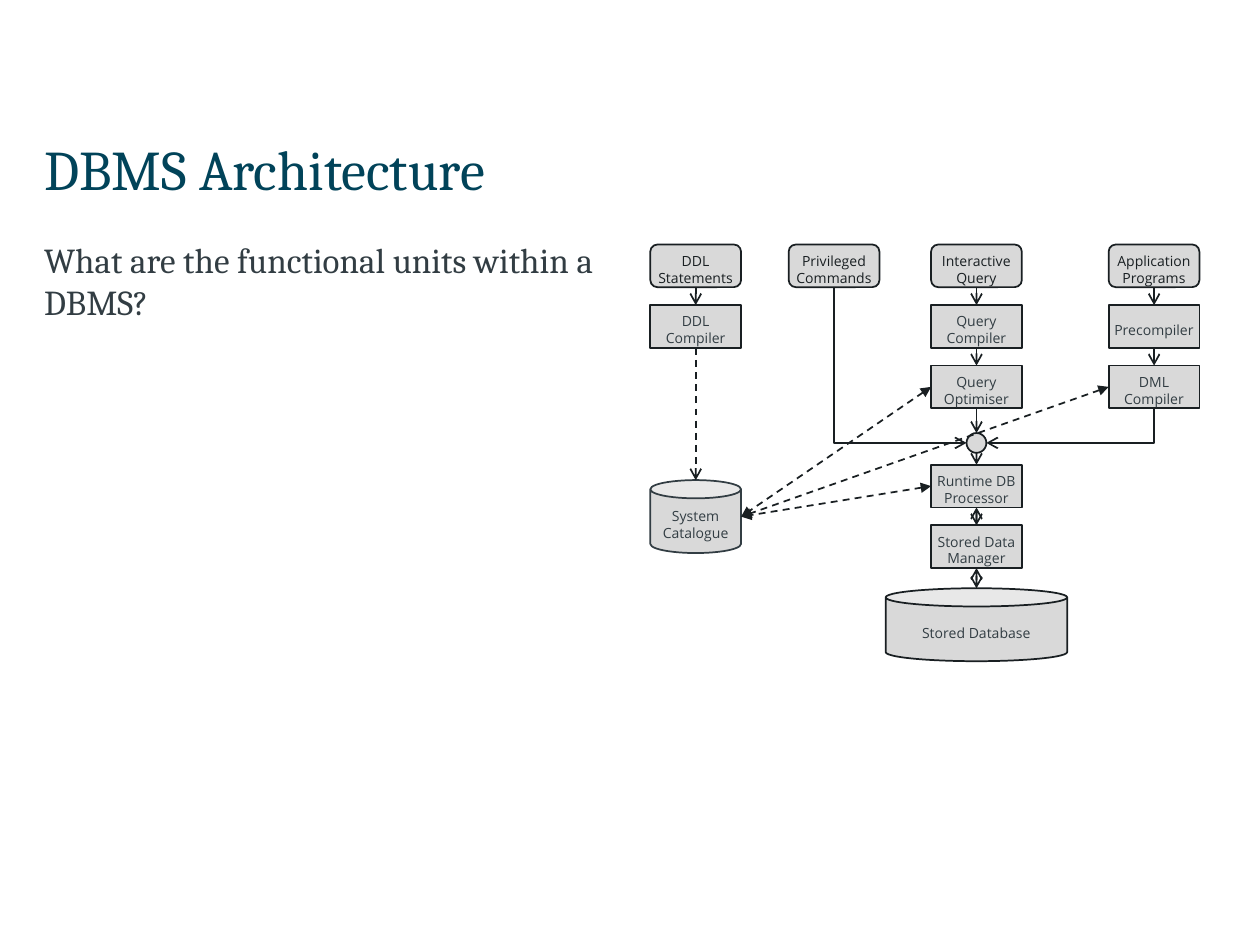
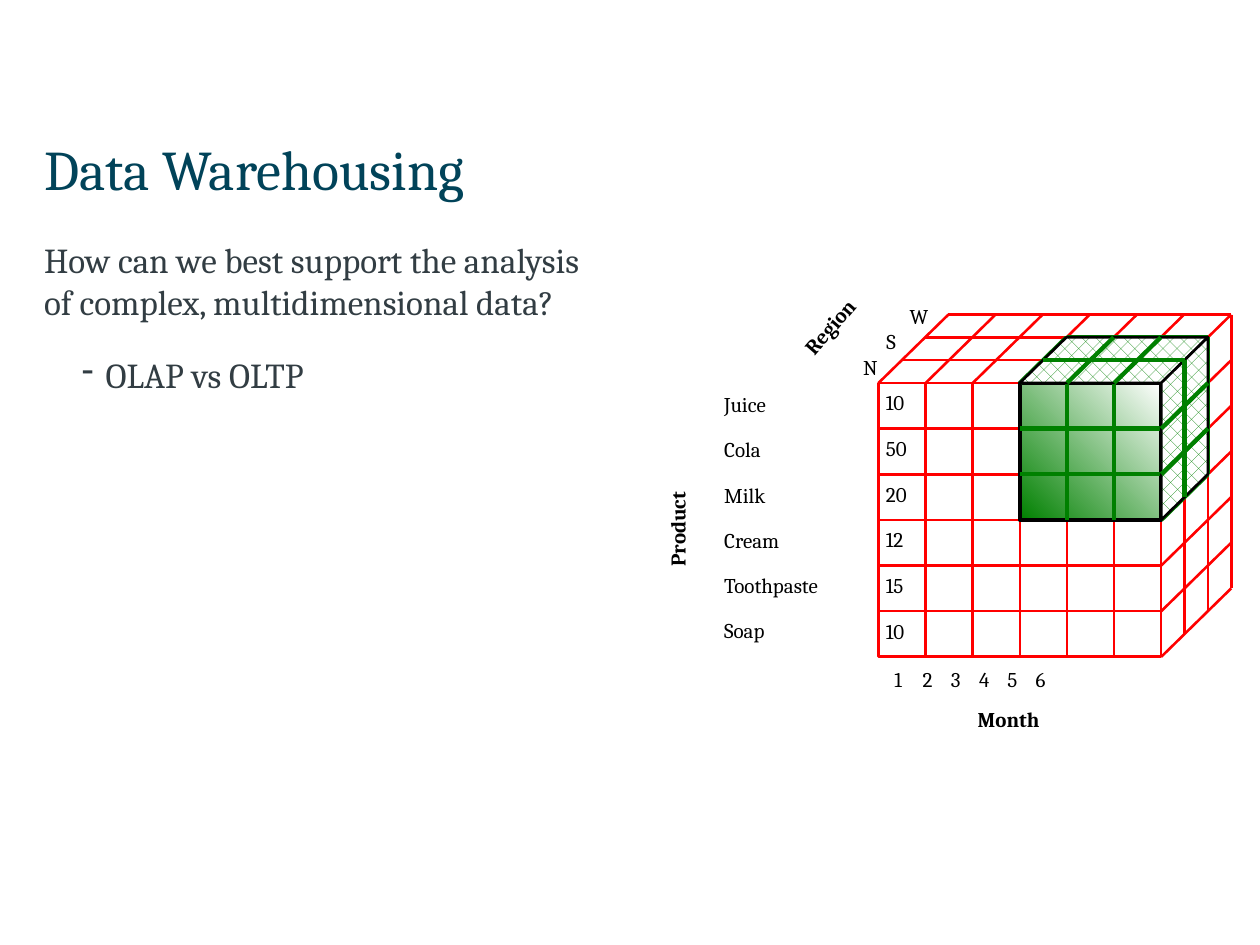
from lxml.etree import SubElement
from pptx import Presentation
from pptx.dml.color import RGBColor
from pptx.enum.dml import MSO_LINE, MSO_PATTERN
from pptx.enum.shapes import MSO_CONNECTOR as Connector, MSO_SHAPE as Shape
from pptx.enum.text import MSO_ANCHOR as Anchor, PP_ALIGN as Align
from pptx.oxml.ns import qn
from pptx.util import Cm, Pt

SERIF = "Cambria"
SANS = "Open Sans"
TITLE = "014359"
SLATE = "323D43"
INK = "191F22"
GREY = "D9D9D9"
RED = "FF0000"
GREEN = "008000"
BLACK = "000000"
WHITE = "FFFFFF"

COLUMN_DDL, COLUMN_COMMANDS, COLUMN_QUERY, COLUMN_PROGRAMS = 13.11, 15.9, 18.77, 22.35
UNIT_WIDTH, UNIT_HEIGHT, ROW_PITCH = 1.83, 0.86, 1.22
FIRST_ROW, RUNTIME_ROW = 4.93, 9.37
CAN_HEIGHT, JUNCTION = 1.47, 0.4

CUBE_LEFT, CUBE_TOP = 17.71, 7.72
MONTH_STEP, PRODUCT_STEP = 0.95, 0.92
REGION_SHIFT, REGION_RISE = 0.47, 0.46
MONTHS, PRODUCTS, REGIONS = 6, 6, 3


def colour(code):
    return RGBColor.from_string(code)


def style_font(paragraph, size, name, code, bold=False):
    font = paragraph.font
    font.size = Pt(size)
    font.name = name
    font.bold = bold
    font.color.rgb = colour(code)


def set_insets(frame, left, top, right, bottom):
    frame.margin_left, frame.margin_top = Cm(left), Cm(top)
    frame.margin_right, frame.margin_bottom = Cm(right), Cm(bottom)


def style_line(line, code, width):
    line.color.rgb = colour(code)
    line.width = Pt(width)


def add_titled_page(deck, title):
    page = deck.slides.add_slide(deck.slide_layouts[5])
    box = page.shapes.title
    box.left, box.top, box.width, box.height = Cm(0.89), Cm(2.49), Cm(23.6), Cm(1.8)
    frame = box.text_frame
    frame.text = title
    frame.vertical_anchor = Anchor.MIDDLE
    set_insets(frame, 0, 0.13, 0.25, 0.13)
    para = frame.paragraphs[0]
    para.alignment = Align.LEFT
    style_font(para, 32, SERIF, TITLE)
    return page


def add_body(page, question, *points):
    frame = page.shapes.add_textbox(Cm(0.89), Cm(4.67), Cm(11.38), Cm(12.47)).text_frame
    frame.word_wrap = True
    set_insets(frame, 0, 0.13, 0.25, 0.13)
    para = frame.paragraphs[0]
    para.text = question
    para.space_after = Pt(18)
    style_font(para, 20, SERIF, SLATE)
    for point in points:
        para = frame.add_paragraph()
        para.text = point
        para.space_after = Pt(12)
        properties = para._p.get_or_add_pPr()
        properties.set("marL", str(Cm(1.24)))
        properties.set("indent", str(Cm(-0.48)))
        SubElement(properties, qn("a:buChar")).set("char", "-")
        style_font(para, 20, SERIF, SLATE)


def add_unit(page, kind, left, top, width, height, text="", text_colour=SLATE, line_colour=INK):
    unit = page.shapes.add_shape(kind, Cm(left), Cm(top), Cm(width), Cm(height))
    unit.shadow.inherit = False
    unit.fill.solid()
    unit.fill.fore_color.rgb = colour(GREY)
    style_line(unit.line, line_colour, 1)
    if text:
        frame = unit.text_frame
        frame.text = text
        frame.word_wrap = False
        frame.vertical_anchor = Anchor.MIDDLE
        set_insets(frame, 0.25, 0.13, 0.25, 0)
        for para in frame.paragraphs:
            para.alignment = Align.CENTER
            style_font(para, 8, SANS, text_colour)
    return unit


def add_input(page, left, text):
    return add_unit(page, Shape.ROUNDED_RECTANGLE, left, FIRST_ROW,
                    UNIT_WIDTH, UNIT_HEIGHT, text, INK)


def add_step(page, left, top, text):
    return add_unit(page, Shape.RECTANGLE, left, top, UNIT_WIDTH, UNIT_HEIGHT, text)


def side(shape, across, down):
    return shape.left + int(shape.width * across), shape.top + int(shape.height * down)


def top_of(shape):
    return side(shape, 0.5, 0)


def bottom_of(shape):
    return side(shape, 0.5, 1)


def left_of(shape):
    return side(shape, 0, 0.5)


def right_of(shape):
    return side(shape, 1, 0.5)


def add_line(page, start, end, code=INK, width=1, head=None, tail=None, dashed=False, bent=False):
    kind = Connector.ELBOW if bent else Connector.STRAIGHT
    link = page.shapes.add_connector(kind, *start, *end)
    style_line(link.line, code, width)
    if dashed:
        link.line.dash_style = MSO_LINE.DASH
    properties = link._element.spPr
    if bent:
        properties.find(qn("a:prstGeom")).set("prst", "bentConnector2")
    for tag, arrow in (("a:headEnd", head), ("a:tailEnd", tail)):
        if arrow:
            SubElement(properties.find(qn("a:ln")), qn(tag)).set("type", arrow)
    SubElement(properties, qn("a:effectLst"))


def add_label(page, left, top, width, text, bold=False, height=0.6, rotation=0, tab=None):
    box = page.shapes.add_textbox(Cm(left), Cm(top), Cm(width), Cm(height))
    box.rotation = rotation
    frame = box.text_frame
    frame.word_wrap = True
    set_insets(frame, 0, 0, 0, 0)
    para = frame.paragraphs[0]
    para.text = text
    if tab:
        stops = SubElement(para._p.get_or_add_pPr(), qn("a:tabLst"))
        for number in range(1, text.count("\t") + 1):
            stop = SubElement(stops, qn("a:tab"))
            stop.set("pos", str(Cm(tab * number)))
            stop.set("algn", "l")
    style_font(para, 12, SERIF, BLACK, bold)


def cube_point(month, product, region):
    return (Cm(CUBE_LEFT + month * MONTH_STEP + region * REGION_SHIFT),
            Cm(CUBE_TOP + product * PRODUCT_STEP - region * REGION_RISE))


def add_cube_lines(page, code, width, *pairs):
    for start, end in pairs:
        add_line(page, cube_point(*start), cube_point(*end), code, width)


def add_front(page, first_month, products, code, width):
    left, top = cube_point(first_month, 0, 0)
    right, bottom = cube_point(MONTHS, products, 0)
    front = page.shapes.add_shape(Shape.RECTANGLE, left, top, right - left, bottom - top)
    front.shadow.inherit = False
    front.fill.background()
    style_line(front.line, code, width)
    return front


def add_grid(page, first_month, products, code, width):
    add_cube_lines(page, code, width,
                   *[((first_month, row, 0), (MONTHS, row, 0)) for row in range(1, products)],
                   *[((month, 0, 0), (month, products, 0))
                     for month in range(first_month + 1, MONTHS)])


def add_depth(page, first_month, months, products, depth, levels, code, width):
    add_cube_lines(page, code, width,
                   *[((month, 0, 0), (month, 0, depth)) for month in months],
                   *[((MONTHS, row, 0), (MONTHS, row, depth)) for row in products],
                   *[((first_month, 0, level), (MONTHS, 0, level)) for level in levels],
                   *[((MONTHS, 0, level), (MONTHS, max(products) + (depth == 2), level))
                     for level in levels])


def add_face(page, *corners):
    first, *others = [cube_point(*corner) for corner in corners]
    builder = page.shapes.build_freeform(*first, scale=1.0)
    builder.add_line_segments(others, close=True)
    face = builder.convert_to_shape()
    face.shadow.inherit = False
    face.fill.patterned()
    face.fill.pattern = MSO_PATTERN.PERCENT_25
    face.fill.fore_color.rgb = colour(GREEN)
    face.fill.back_color.rgb = colour(WHITE)
    style_line(face.line, BLACK, 1.48)


def add_selection(page):
    first, last, rows, depth = 3, MONTHS, 3, 2
    front = add_front(page, first, rows, BLACK, 2.48)
    front.fill.gradient()
    front.fill.gradient_angle = 45
    for stop, position, code in zip(front.fill.gradient_stops, (0, 1), (GREEN, WHITE)):
        stop.position = position
        stop.color.rgb = colour(code)
    add_grid(page, first, rows, GREEN, 2.48)
    add_cube_lines(page, GREEN, 2.48,
                   ((first, 0, 0), (first, 0, depth)), ((first, 0, depth), (last, 0, depth)),
                   ((last, 0, depth), (last, rows, depth)), ((last, rows, 0), (last, rows, depth)),
                   ((last, 0, 0), (last, 0, depth)))
    add_face(page, (first, 0, 0), (first, 0, depth), (last, 0, depth), (last, 0, 0))
    add_face(page, (last, 0, 0), (last, 0, depth), (last, rows, depth), (last, rows, 0))
    add_depth(page, first, range(first + 1, last), range(1, rows), depth, [1], GREEN, 2.48)


def build_architecture(deck):
    page = add_titled_page(deck, "DBMS Architecture")
    add_body(page, "What are the functional units within a DBMS?")
    second_row, third_row = FIRST_ROW + ROW_PITCH, FIRST_ROW + 2 * ROW_PITCH

    statements = add_input(page, COLUMN_DDL, "DDL\nStatements")
    commands = add_input(page, COLUMN_COMMANDS, "Privileged\nCommands")
    query = add_input(page, COLUMN_QUERY, "Interactive\nQuery")
    programs = add_input(page, COLUMN_PROGRAMS, "Application\nPrograms")
    ddl_compiler = add_step(page, COLUMN_DDL, second_row, "DDL\nCompiler")
    query_compiler = add_step(page, COLUMN_QUERY, second_row, "Query\nCompiler")
    precompiler = add_step(page, COLUMN_PROGRAMS, second_row, "Precompiler")
    optimiser = add_step(page, COLUMN_QUERY, third_row, "Query\nOptimiser")
    dml_compiler = add_step(page, COLUMN_PROGRAMS, third_row, "DML\nCompiler")
    runtime = add_step(page, COLUMN_QUERY, RUNTIME_ROW, "Runtime DB\nProcessor")
    manager = add_step(page, COLUMN_QUERY, RUNTIME_ROW + ROW_PITCH, "Stored Data\nManager")
    catalogue = add_unit(page, Shape.CAN, COLUMN_DDL, 9.68, UNIT_WIDTH, CAN_HEIGHT,
                         "System\nCatalogue", line_colour=SLATE)
    database = add_unit(page, Shape.CAN, COLUMN_QUERY - UNIT_WIDTH / 2, 11.86,
                        2 * UNIT_WIDTH, CAN_HEIGHT, "Stored Database")
    junction = add_unit(page, Shape.OVAL, COLUMN_QUERY + (UNIT_WIDTH - JUNCTION) / 2, 8.73,
                        JUNCTION, JUNCTION)

    for upper, lower in ((statements, ddl_compiler), (query, query_compiler),
                         (query_compiler, optimiser), (programs, precompiler),
                         (precompiler, dml_compiler), (optimiser, junction),
                         (junction, runtime)):
        add_line(page, bottom_of(upper), top_of(lower), tail="arrow")
    for upper, lower in ((runtime, manager), (manager, database)):
        add_line(page, bottom_of(upper), top_of(lower), head="arrow", tail="arrow")
    add_line(page, bottom_of(ddl_compiler), top_of(catalogue), tail="arrow", dashed=True)
    add_line(page, left_of(junction), bottom_of(commands), head="arrow", bent=True)
    add_line(page, right_of(junction), bottom_of(dml_compiler), head="arrow", bent=True)
    for reader in (optimiser, dml_compiler, runtime):
        add_line(page, left_of(reader), right_of(catalogue),
                 head="triangle", tail="triangle", dashed=True)


def build_warehousing(deck):
    page = add_titled_page(deck, "Data Warehousing")
    add_body(page, "How can we best support the analysis of complex, multidimensional data?",
             "OLAP vs OLTP")
    add_front(page, 0, PRODUCTS, RED, 1.48)
    add_grid(page, 0, PRODUCTS, RED, 1.48)
    add_depth(page, 0, range(MONTHS + 1), range(1, PRODUCTS + 1), REGIONS,
              range(1, REGIONS + 1), RED, 1.48)

    sales = (("Juice", "10"), ("Cola", "50"), ("Milk", "20"),
             ("Cream", "12"), ("Toothpaste", "15"), ("Soap", "10"))
    for row, (product, amount) in enumerate(sales):
        add_label(page, 14.6, 7.9 + row * 0.91, 3, product)
        add_label(page, 17.86, 7.86 + row * PRODUCT_STEP, 0.64, amount)
    for level, region in enumerate("NSW"):
        add_label(page, 17.4 + level * REGION_SHIFT, 7.14 - level * 0.51, 0.6, region)
    add_label(page, 18.03, 13.44, 5.23, "\t".join("123456"), tab=0.57)
    add_label(page, 19.71, 14.25, 2.74, "Month", bold=True)
    add_label(page, 15.93, 5.82, 2.57, "Region", bold=True, height=0.71, rotation=311)
    add_label(page, 12.09, 9.22, 3.51, "Product", bold=True, height=0.89, rotation=270)
    add_selection(page)


def main():
    deck = Presentation()
    deck.slide_width, deck.slide_height = Cm(25.4), Cm(19.05)
    build_architecture(deck)
    build_warehousing(deck)
    deck.save("out.pptx")


if __name__ == "__main__":
    main()
